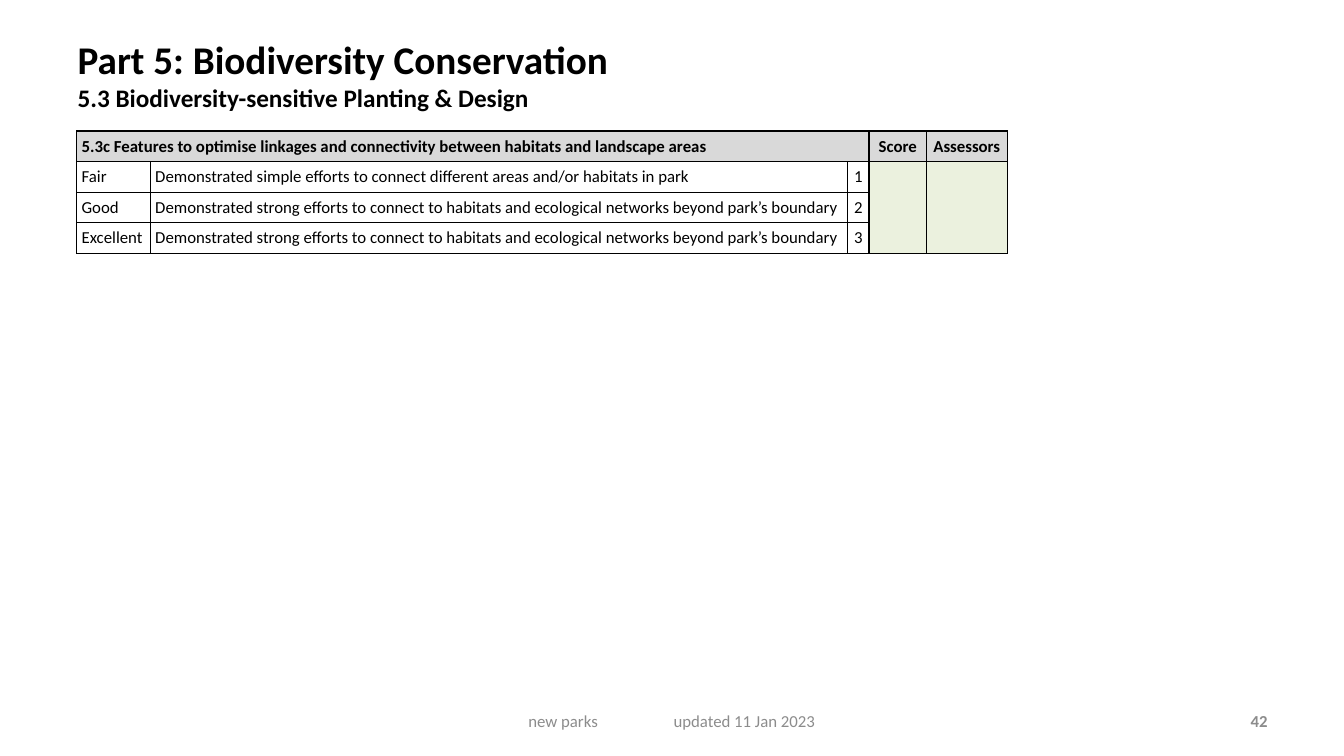
from dataclasses import dataclass

from lxml import etree
from pptx import Presentation
from pptx.dml.color import RGBColor
from pptx.enum import text as t
from pptx.oxml import ns
from pptx.util import Inches, Pt

BLACK = RGBColor(0x00, 0x00, 0x00)
GREY = RGBColor(0x8C, 0x8C, 0x8C)
HEADER_FILL = RGBColor(0xD9, 0xD9, 0xD9)
ENTRY_FILL = RGBColor(0xEB, 0xF1, 0xDE)
WHITE = RGBColor(0xFF, 0xFF, 0xFF)
FONT = "Calibri"
LEFT, CENTER, RIGHT = t.PP_ALIGN.LEFT, t.PP_ALIGN.CENTER, t.PP_ALIGN.RIGHT
COLUMN_WIDTHS = (0.73, 6.92, 0.21, 0.57, 0.8)
ROW_HEIGHT = 0.3
CELL_MARGIN = 0.05


@dataclass(frozen=True)
class Rating:
    level: str
    description: str
    score: str


@dataclass(frozen=True)
class Label:
    wording: str
    left: float
    width: float
    alignment: t.PP_ALIGN
    bold: bool = False
    inset: float = 0.1
    tab: float = 0


BEYOND_BOUNDARY = (
    "Demonstrated strong efforts to connect to habitats and ecological "
    "networks beyond park’s boundary"
)
RATINGS = (
    Rating("Fair", "Demonstrated simple efforts to connect different areas "
                   "and/or habitats in park", "1"),
    Rating("Good", BEYOND_BOUNDARY, "2"),
    Rating("Excellent", BEYOND_BOUNDARY, "3"),
)
HEADINGS = (
    "5.3c Features to optimise linkages and connectivity between habitats "
    "and landscape areas", "", "", "Score", "Assessors",
)
LABELS = (
    Label("42", 9.56, 3.11, RIGHT, bold=True),
    Label("new parks\tupdated 11 Jan 2023", 4.56, 4.22, LEFT, inset=0.68, tab=1.44),
)


def write_text(paragraph, wording: str, *, size: float = 12, bold: bool = False,
               color: RGBColor = BLACK, alignment: t.PP_ALIGN = LEFT) -> None:
    paragraph.alignment = alignment
    if not wording:
        etree.SubElement(paragraph._p, ns.qn("a:endParaRPr"), sz=str(size * 100))
        return
    run = paragraph.add_run()
    run.text = wording
    run.font.name = FONT
    run.font.size = Pt(size)
    run.font.bold = bold
    run.font.color.rgb = color


def add_title(slide) -> None:
    title = slide.shapes.title
    title.left, title.top = Inches(0.67), Inches(0.3)
    title.width, title.height = Inches(10.36), Inches(0.99)
    frame = title.text_frame
    frame.word_wrap = True
    frame.auto_size = t.MSO_AUTO_SIZE.NONE
    frame.vertical_anchor = t.MSO_ANCHOR.TOP
    write_text(frame.paragraphs[0], "Part 5: Biodiversity Conservation",
               size=28, bold=True)
    write_text(frame.add_paragraph(), "5.3 Biodiversity-sensitive Planting & Design",
               size=18, bold=True)


def format_cell(cell, fill: RGBColor) -> None:
    cell.vertical_anchor = t.MSO_ANCHOR.MIDDLE
    cell.margin_left = cell.margin_right = Inches(CELL_MARGIN)
    cell.margin_top = cell.margin_bottom = Inches(CELL_MARGIN)
    properties = cell._tc.get_or_add_tcPr()
    for side in ("lnL", "lnR", "lnT", "lnB"):
        line = etree.SubElement(properties, ns.qn(f"a:{side}"), w=str(Pt(1)))
        solid = etree.SubElement(line, ns.qn("a:solidFill"))
        etree.SubElement(solid, ns.qn("a:srgbClr"), val=str(BLACK))
    cell.fill.solid()
    cell.fill.fore_color.rgb = fill


def add_score_table(slide) -> None:
    rows = [HEADINGS] + [
        (rating.level, rating.description, rating.score, "", "") for rating in RATINGS
    ]
    table = slide.shapes.add_table(
        len(rows), len(COLUMN_WIDTHS), Inches(0.76), Inches(1.3),
        Inches(sum(COLUMN_WIDTHS)), Inches(ROW_HEIGHT * len(rows))).table
    table.first_row = table.horz_banding = False
    for column, width in zip(table.columns, COLUMN_WIDTHS):
        column.width = Inches(width)
    for row_index, row in enumerate(rows):
        table.rows[row_index].height = Inches(ROW_HEIGHT)
        for column_index, wording in enumerate(row):
            cell = table.cell(row_index, column_index)
            is_header = row_index == 0
            body_fill = ENTRY_FILL if column_index > 2 else WHITE
            format_cell(cell, HEADER_FILL if is_header else body_fill)
            write_text(cell.text_frame.paragraphs[0], wording, bold=is_header,
                       alignment=CENTER if column_index > 1 else LEFT)
    table.cell(0, 0).merge(table.cell(0, 2))
    for column_index in (3, 4):
        table.cell(1, column_index).merge(table.cell(len(RATINGS), column_index))


def add_label(slide, label: Label) -> None:
    box = slide.shapes.add_textbox(
        Inches(label.left), Inches(6.95), Inches(label.width), Inches(0.4))
    frame = box.text_frame
    frame.word_wrap = True
    frame.vertical_anchor = t.MSO_ANCHOR.MIDDLE
    frame.margin_left = Inches(label.inset)
    paragraph = frame.paragraphs[0]
    if label.tab:
        tabs = etree.SubElement(paragraph._p.get_or_add_pPr(), ns.qn("a:tabLst"))
        etree.SubElement(tabs, ns.qn("a:tab"), pos=str(Inches(label.tab)), algn="l")
    write_text(paragraph, label.wording, bold=label.bold, color=GREY,
               alignment=label.alignment)


def main() -> None:
    presentation = Presentation()
    presentation.slide_width = Inches(13.33)
    presentation.slide_height = Inches(7.5)
    slide = presentation.slides.add_slide(presentation.slide_layouts[5])
    add_title(slide)
    add_score_table(slide)
    for label in LABELS:
        add_label(slide, label)
    presentation.save("out.pptx")


if __name__ == "__main__":
    main()
